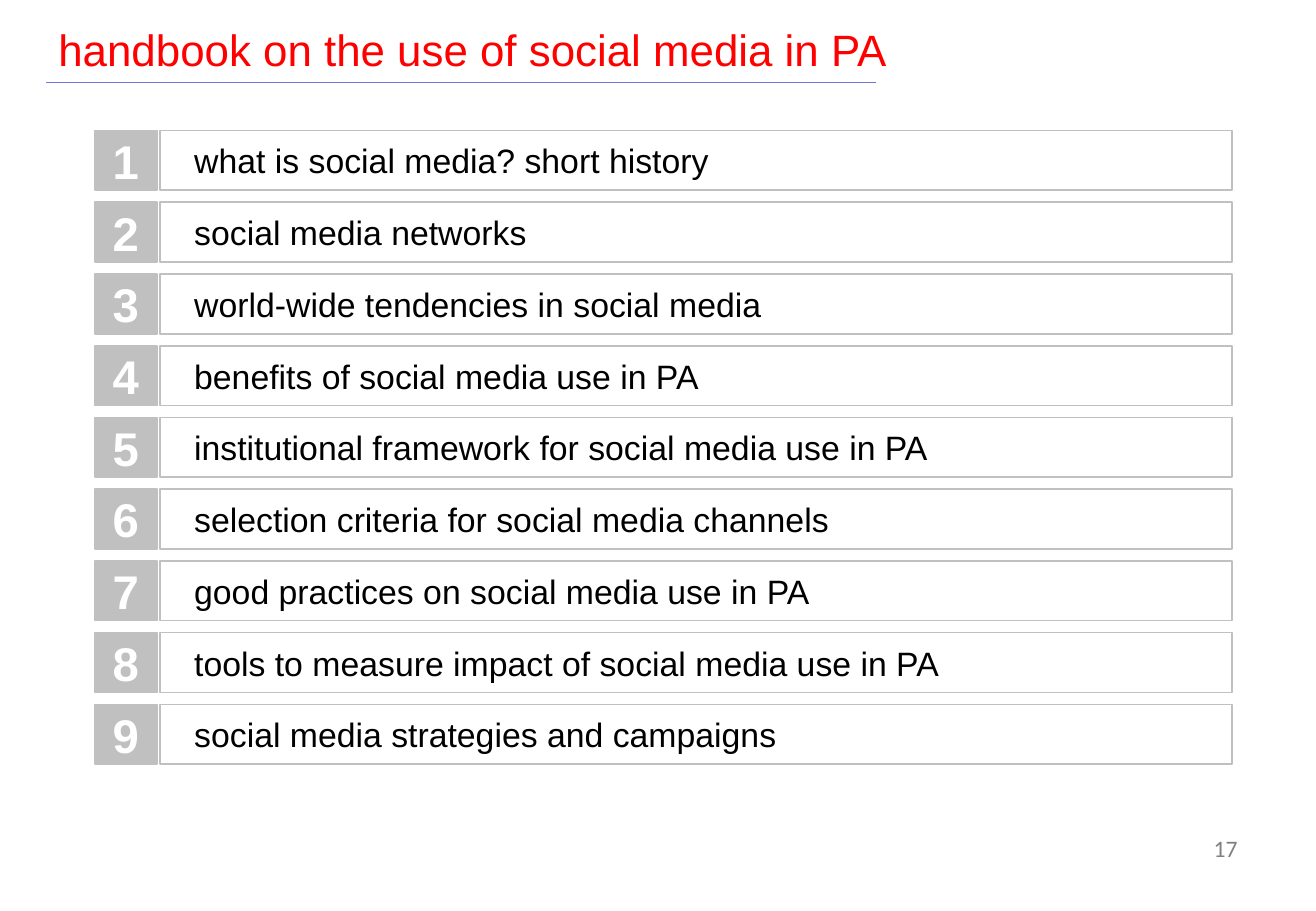
from lxml.etree import SubElement
from pptx import Presentation
from pptx.dml.color import RGBColor
from pptx.enum.shapes import MSO_CONNECTOR, MSO_SHAPE
from pptx.enum.text import MSO_ANCHOR, PP_ALIGN
from pptx.oxml.ns import qn
from pptx.util import Cm, Pt

GREY = "C0C0C0"
TOPICS = [
    "what is social media? short history",
    "social media networks",
    "world-wide tendencies in social media",
    "benefits of social media use in PA",
    "institutional framework for social media use in PA",
    "selection criteria for social media channels",
    "good practices on social media use in PA",
    "tools to measure impact of social media use in PA",
    "social media strategies and campaigns",
]
FIRST_TOP, PITCH, ROW_HEIGHT = 2.73, 1.5, 1.25


def rgb(value):
    """Return the colour for a hex string."""
    return RGBColor.from_string(value)


def write(sp, text, size, color, font="Arial", bold=False,
          align=PP_ALIGN.LEFT, anchor=MSO_ANCHOR.MIDDLE):
    """Put one formatted paragraph into a shape."""
    tf = sp.text_frame
    tf.word_wrap = True
    tf.vertical_anchor = anchor
    p = tf.paragraphs[0]
    p.text = text
    p.alignment = align
    p.font.name = font
    p.font.size = Pt(size)
    p.font.bold = bold
    p.font.color.rgb = rgb(color)


def add_text(s, left, top, width, height, text, size, color, **style):
    """Add a text box."""
    sp = s.shapes.add_textbox(Cm(left), Cm(top), Cm(width), Cm(height))
    write(sp, text, size, color, **style)


def add_box(s, left, top, width, insets, fill=None):
    """Add a grey-edged rectangle of one row's height."""
    sp = s.shapes.add_shape(MSO_SHAPE.RECTANGLE, Cm(left), Cm(top),
                            Cm(width), Cm(ROW_HEIGHT))
    sp.shadow.inherit = False
    sp.line.color.rgb = rgb(GREY)
    sp.line.width = Pt(1)
    if fill:
        sp.fill.solid()
        sp.fill.fore_color.rgb = rgb(fill)
    else:
        sp.fill.background()
    tf = sp.text_frame
    tf.margin_left, tf.margin_top, tf.margin_right, tf.margin_bottom = map(Cm, insets)
    return sp


def add_topic(s, number, topic):
    """Add a numbered topic row."""
    top = FIRST_TOP + (number - 1) * PITCH
    write(add_box(s, 3.35, top, 22.4, (0.71, 0.2, 0.2, 0.2)), topic, 20, "000000")
    write(add_box(s, 1.98, top, 1.3, (0, 0, 0, 0), GREY), str(number), 28, "FFFFFF",
          bold=True, align=PP_ALIGN.CENTER)


def add_rule(s, left, right, y):
    """Add the thin line under the title."""
    line = s.shapes.add_connector(MSO_CONNECTOR.STRAIGHT, Cm(left), Cm(y), Cm(right), Cm(y))
    line.line.color.rgb = rgb("7575D1")
    line.line.width = Pt(0.75)
    SubElement(line._element.spPr, qn("a:effectLst"))


def main():
    """Build and save the slide."""
    prs = Presentation()
    prs.slide_width, prs.slide_height = Cm(27.51), Cm(19.05)
    s = prs.slides.add_slide(prs.slide_layouts[6])
    add_rule(s, 0.97, 18.31, 1.73)
    add_text(s, 0.97, 0.33, 18.39, 1.4,
             "handbook on the use of social media in PA", 26, "FF0000")
    add_text(s, 24.16, 17.32, 1.96, 1.4, "17", 14, "808080", font="Calibri",
             align=PP_ALIGN.RIGHT, anchor=MSO_ANCHOR.TOP)
    for number, topic in enumerate(TOPICS, 1):
        add_topic(s, number, topic)
    prs.save("out.pptx")


if __name__ == "__main__":
    main()
